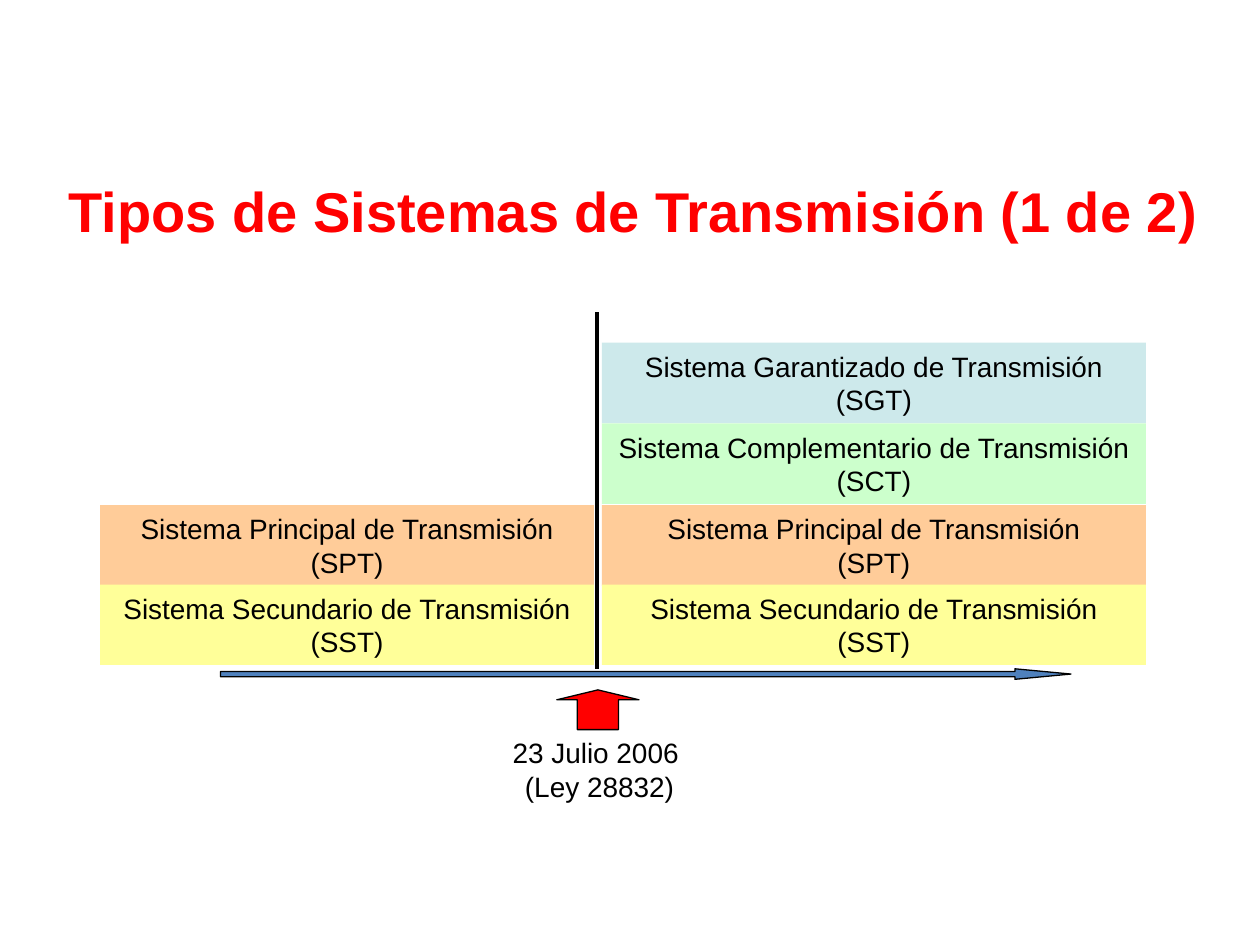
from pptx import Presentation
from pptx.dml.color import RGBColor
from pptx.enum.shapes import MSO_CONNECTOR, MSO_SHAPE
from pptx.enum.text import MSO_ANCHOR, PP_ALIGN
from pptx.oxml.ns import qn
from pptx.util import Pt
from lxml.etree import SubElement

COLORS = {
    "red": "FF0000", "black": "000000", "blue": "4F81BD", "orange": "FFCC99",
    "yellow": "FFFF99", "green": "CCFFCC", "aqua": "CDE9EB",
}


def write(shape, lines, size=16, color="black", bold=False):
    """Fill a shape with centred paragraphs, one per line."""
    frame = shape.text_frame
    frame.word_wrap = True
    frame.text = "\n".join(lines)
    for para in frame.paragraphs:
        para.alignment = PP_ALIGN.CENTER
        para.font.name = "Arial"
        para.font.size = Pt(size)
        para.font.bold = bold
        para.font.color.rgb = RGBColor.from_string(COLORS[color])


def add_block(kind, box, fill, outline=False):
    shape = slide.shapes.add_shape(kind, *map(Pt, box))
    shape.shadow.inherit = False
    shape.fill.solid()
    shape.fill.fore_color.rgb = RGBColor.from_string(COLORS[fill])
    if outline:
        shape.line.color.rgb = RGBColor.from_string(COLORS["black"])
        shape.line.width = Pt(0.75)
    else:
        shape.line.fill.background()
    return shape


deck = Presentation()
deck.slide_width, deck.slide_height = Pt(720), Pt(540)
slide = deck.slides.add_slide(deck.slide_layouts[5])

# Title
title = slide.shapes.title
title.left, title.top, title.width, title.height = map(Pt, (29.5, 94.3, 665.3, 51))
write(title, ["Tipos de Sistemas de Transmisión (1 de 2)"], 32, "red", True)
frame = title.text_frame
frame.margin_left = frame.margin_right = 0
frame.vertical_anchor = MSO_ANCHOR.MIDDLE

# Divider between the periods before and after the law
line = slide.shapes.add_connector(
    MSO_CONNECTOR.STRAIGHT, Pt(341.3), Pt(178.4), Pt(341.3), Pt(382.3))
line.line.color.rgb = RGBColor.from_string(COLORS["black"])
line.line.width = Pt(2.5)
SubElement(line._element.spPr, qn("a:effectLst"))

# Date of the law
date = slide.shapes.add_textbox(Pt(270.6), Pt(416.8), Pt(144), Pt(46))
write(date, ["23 Julio 2006 ", "(Ley 28832)"])

# Systems, from the bottom row up
height = 46
systems = [
    ("Secundario", "SST", "yellow", 334),
    ("Principal", "SPT", "orange", 288.6),
    ("Complementario", "SCT", "green", 242),
    ("Garantizado", "SGT", "aqua", 195.8),
]
periods = [(57.2, 282.2, systems[:2]), (344, 310.8, systems)]
for left, width, stack in periods:
    for name, code, fill, top in reversed(stack):
        block = add_block(MSO_SHAPE.RECTANGLE, (left, top, width, height), fill)
        write(block, [f"Sistema {name} de Transmisión", f"({code})"])

# Time axis and the marker of the date
axis = add_block(MSO_SHAPE.RIGHT_ARROW, (126, 382.2, 486, 6), "blue", True)
axis.adjustments[1] = 5.33
mark = add_block(MSO_SHAPE.UP_ARROW, (318.2, 394.2, 47, 22.7), "red", True)
mark.adjustments[1] = 0.25

deck.save("out.pptx")
